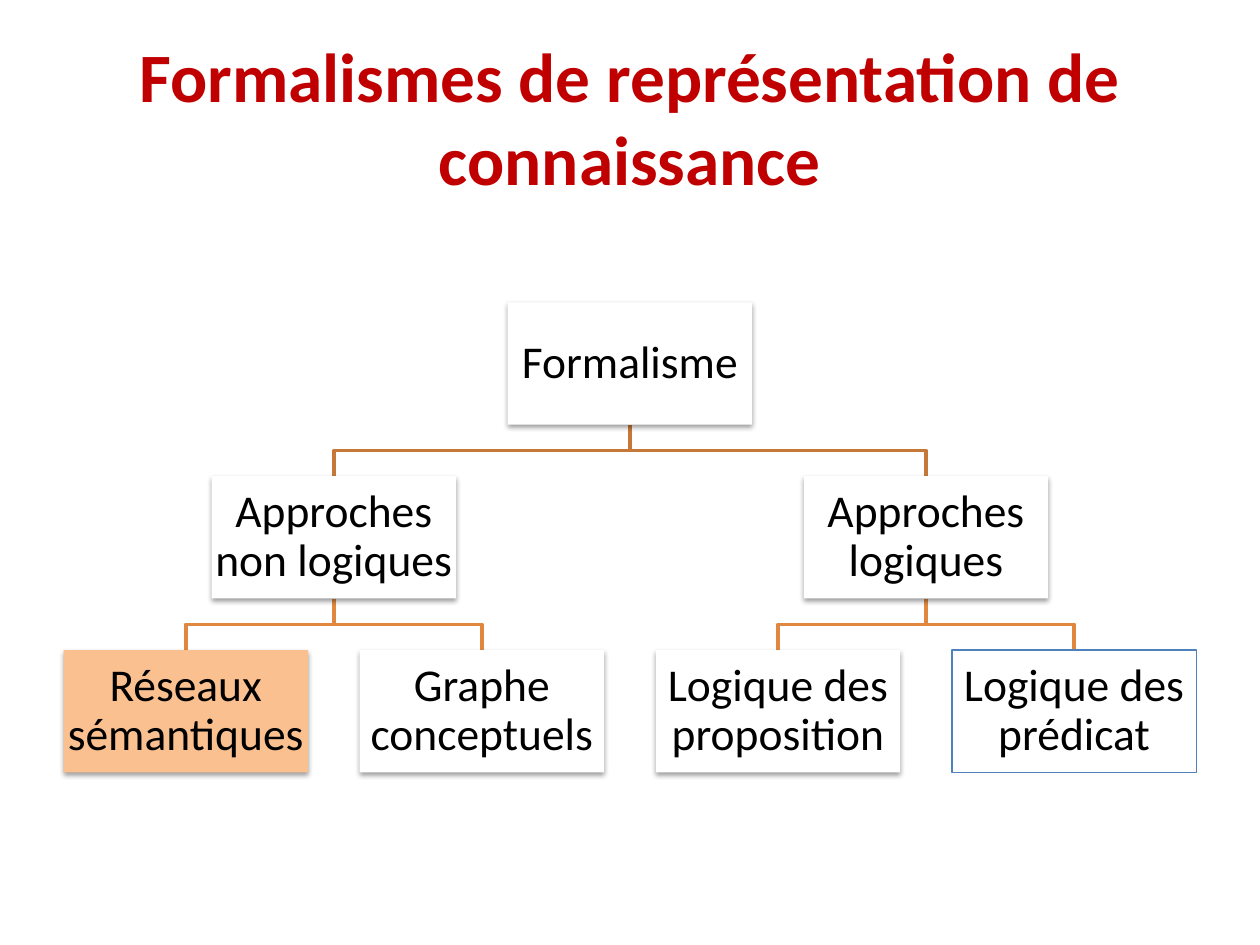
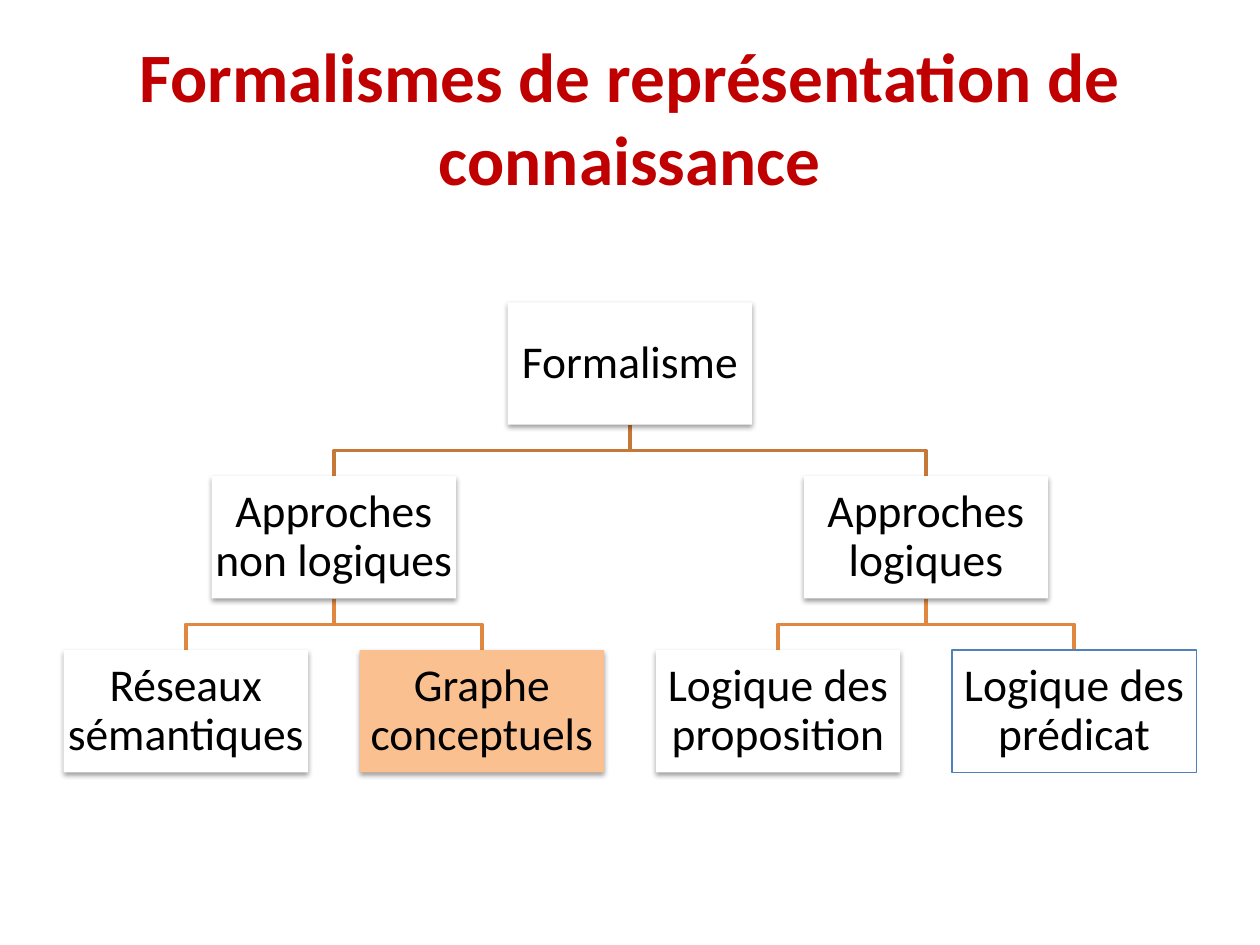
"""Builds two slides of a knowledge representation tree, each with one leaf highlighted."""
from dataclasses import dataclass

from lxml.etree import SubElement
from pptx import Presentation
from pptx.dml.color import RGBColor
from pptx.enum.shapes import MSO_SHAPE
from pptx.enum.text import MSO_ANCHOR, PP_ALIGN
from pptx.oxml.ns import qn
from pptx.util import Inches, Pt


@dataclass(frozen=True)
class Theme:
    font: str = "Calibri"
    title_size: float = 39.6
    box_size: float = 26
    title: RGBColor = RGBColor(0xC0, 0x00, 0x00)
    text: RGBColor = RGBColor(0x00, 0x00, 0x00)
    box: RGBColor = RGBColor(0xFF, 0xFF, 0xFF)
    highlight: RGBColor = RGBColor(0xFA, 0xC0, 0x90)
    outline: RGBColor = RGBColor(0x4F, 0x81, 0xBD)
    upper_link: RGBColor = RGBColor(0xC6, 0x78, 0x38)
    lower_link: RGBColor = RGBColor(0xE0, 0x88, 0x40)


T = Theme()
CENTER, TOP = 5, 2.4
BOX_W, BOX_H = 1.94, 0.97
COL_STEP, ROW_STEP = 2.35, 1.38
TITLE = "Formalismes de représentation de connaissance"
OUTLINED = "Logique des prédicat"
NODES = {
    "Formalisme": (0, 0, None),
    "Approches non logiques": (1, -1, "Formalisme"),
    "Réseaux sémantiques": (2, -1.5, "Approches non logiques"),
    "Graphe conceptuels": (2, -0.5, "Approches non logiques"),
    "Approches logiques": (1, 1, "Formalisme"),
    "Logique des proposition": (2, 0.5, "Approches logiques"),
    OUTLINED: (2, 1.5, "Approches logiques"),
}


def set_text(shape, text, size, color, bold, inset):
    tf = shape.text_frame
    tf.text = text
    tf.word_wrap = True
    tf.vertical_anchor = MSO_ANCHOR.MIDDLE
    tf.margin_left = tf.margin_right = Inches(inset[0])
    tf.margin_top = tf.margin_bottom = Inches(inset[1])
    p = tf.paragraphs[0]
    p.alignment = PP_ALIGN.CENTER
    r = p.runs[0]
    r.font.name, r.font.size, r.font.bold = T.font, Pt(size), bold
    r.font.color.rgb = color
    return p


def add_shadow(shape):
    effects = shape._element.spPr.find(qn("a:effectLst"))
    shadow = SubElement(effects, qn("a:outerShdw"), blurRad=str(Pt(3.1)),
                        dist=str(Pt(1.6)), dir="5400000", rotWithShape="0")
    color = SubElement(shadow, qn("a:srgbClr"), val=str(T.text))
    SubElement(color, qn("a:alpha"), val="38000")


prs = Presentation()
prs.slide_width, prs.slide_height = Inches(10), Inches(7.5)

for highlighted in ("Réseaux sémantiques", "Graphe conceptuels"):
    s = prs.slides.add_slide(prs.slide_layouts[6])
    title = s.shapes.add_textbox(Inches(0.5), Inches(0.3), Inches(9), Inches(1.25))
    set_text(title, TITLE, T.title_size, T.title, True, (0.1, 0.05))

    for row, col, parent in NODES.values():
        if parent is None:
            continue
        x, y = CENTER + col * COL_STEP, TOP + row * ROW_STEP
        parent_x = CENTER + NODES[parent][1] * COL_STEP
        parent_y = y - ROW_STEP + BOX_H
        middle_y = (parent_y + y) / 2
        path_points = [(parent_x, middle_y), (x, middle_y), (x, y)]
        builder = s.shapes.build_freeform(Inches(parent_x), Inches(parent_y))
        builder.add_line_segments([(Inches(a), Inches(b)) for a, b in path_points], close=False)
        link = builder.convert_to_shape()
        link.shadow.inherit = False
        link.fill.background()
        link.line.color.rgb = T.upper_link if row == 1 else T.lower_link
        link.line.width = Pt(2)

    for label, (row, col, parent) in NODES.items():
        left = CENTER + col * COL_STEP - BOX_W / 2
        box = s.shapes.add_shape(MSO_SHAPE.RECTANGLE, Inches(left), Inches(TOP + row * ROW_STEP),
                                 Inches(BOX_W), Inches(BOX_H))
        box.shadow.inherit = False
        if label == OUTLINED:
            box.fill.background()
            box.line.color.rgb = T.outline
            box.line.width = Pt(0.75)
        else:
            box.fill.solid()
            box.fill.fore_color.rgb = T.highlight if label == highlighted else T.box
            box.line.fill.background()
            add_shadow(box)
        p = set_text(box, label, T.box_size, T.text, False, (0.02, 0.02))
        p.line_spacing = 0.9

prs.save("out.pptx")
